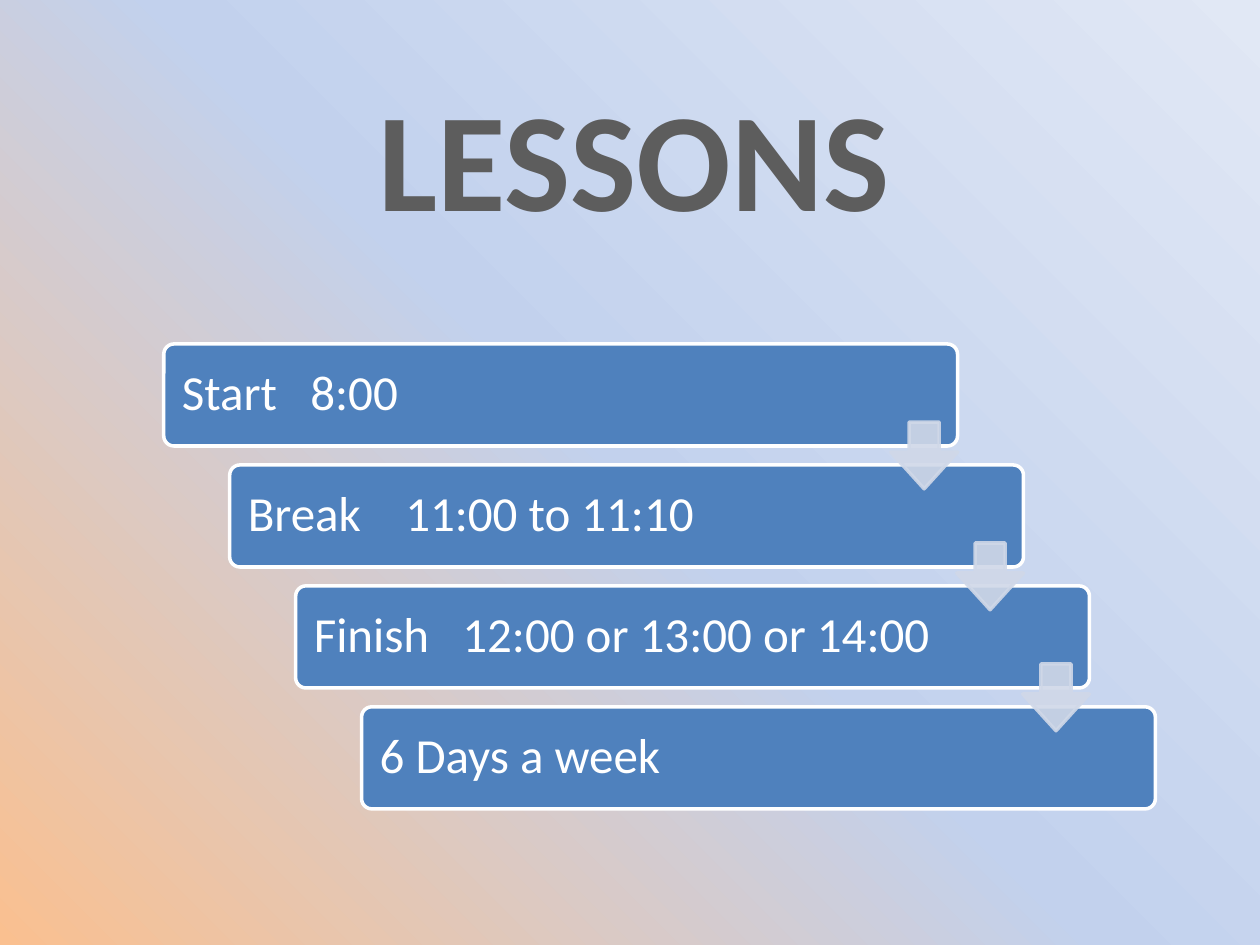
import copy

import lxml.etree
import pptx
import pptx.dml.color
import pptx.enum.shapes
import pptx.enum.text
import pptx.oxml.ns
import pptx.util

Inches = pptx.util.Inches
Pt = pptx.util.Pt
qn = pptx.oxml.ns.qn
KIND = pptx.enum.shapes.MSO_SHAPE
STEPS = [
    ("Start\t8:00", 1.02),
    ("Break\t11:00 to 11:10", 1.25),
    ("Finish\t12:00 or 13:00 or 14:00", 1.18),
    ("6 Days a week", None),
]


def paint(color, code):
    color.rgb = pptx.dml.color.RGBColor.from_string(code)


def style(run, size, code, bold=False):
    run.font.name = "Calibri"
    run.font.size = Pt(size)
    run.font.bold = bold
    paint(run.font.color, code)


def shade(slide):
    fill = slide.background.fill
    fill.gradient()
    fill.gradient_angle = 45
    first = fill.gradient_stops[0]._gs
    first.addnext(copy.deepcopy(first))
    stops = [(0, "FAC090"), (0.5, "C2D1ED"), (1, "E1E8F5")]
    for stop, (place, code) in zip(fill.gradient_stops, stops):
        stop.position = place
        paint(stop.color, code)


def block(slide, kind, box, marks, code, edge):
    shape = slide.shapes.add_shape(kind, *map(Inches, box))
    shape.shadow.inherit = False
    for i, mark in enumerate(marks):
        shape.adjustments[i] = mark
    shape.fill.solid()
    paint(shape.fill.fore_color, code)
    paint(shape.line.color, edge)
    shape.line.width = Pt(2)
    return shape


def add_bar(slide, box, text, stop):
    bar = block(slide, KIND.ROUNDED_RECTANGLE, box, [0.1], "4F81BD", "FFFFFF")
    frame = bar.text_frame
    frame.text = text
    frame.word_wrap = True
    frame.vertical_anchor = pptx.enum.text.MSO_ANCHOR.MIDDLE
    frame.margin_left = frame.margin_right = Inches(0.12)
    frame.margin_top = frame.margin_bottom = Inches(0.12)
    para = frame.paragraphs[0]
    para.alignment = pptx.enum.text.PP_ALIGN.LEFT
    para.line_spacing = 0.9
    if stop:
        tabs = lxml.etree.SubElement(para._p.get_or_add_pPr(), qn("a:tabLst"))
        lxml.etree.SubElement(tabs, qn("a:tab"), pos=str(Inches(stop)), algn="l")
    style(para.runs[0], 28, "FFFFFF")


def add_arrow(slide, box):
    arrow = block(slide, KIND.DOWN_ARROW, box, [0.45, 0.55], "D0D8E8", "D0D8E8")
    for color in arrow._element.spPr.iter(qn("a:srgbClr")):
        lxml.etree.SubElement(color, qn("a:alpha"), val="90000")


def add_steps(slide, box):
    left, top, width, height = box
    wide, tall, side = 6.3, 0.81, 0.53
    last = len(STEPS) - 1
    right = (width - wide) / last
    down = (height - tall) / last
    for i, (text, stop) in enumerate(STEPS):
        add_bar(slide, (left + i * right, top + i * down, wide, tall), text, stop)
    for i in range(last):
        x = left + i * right + wide - side
        y = top + i * down + 0.62
        add_arrow(slide, (x, y, side, side))


def add_title(slide, box):
    frame = slide.shapes.add_textbox(*map(Inches, box)).text_frame
    frame.text = "LESSONS"
    frame.word_wrap = True
    para = frame.paragraphs[0]
    para.alignment = pptx.enum.text.PP_ALIGN.CENTER
    style(para.runs[0], 80, "5D5D5D", True)


def main():
    deck = pptx.Presentation()
    deck.slide_width = Inches(10)
    deck.slide_height = Inches(7.5)
    slide = deck.slides.add_slide(deck.slide_layouts[6])
    shade(slide)
    add_steps(slide, (1.3, 2.73, 7.87, 3.69))
    add_title(slide, (2.24, 0.52, 5.59, 1.45))
    deck.save("out.pptx")


if __name__ == "__main__":
    main()
